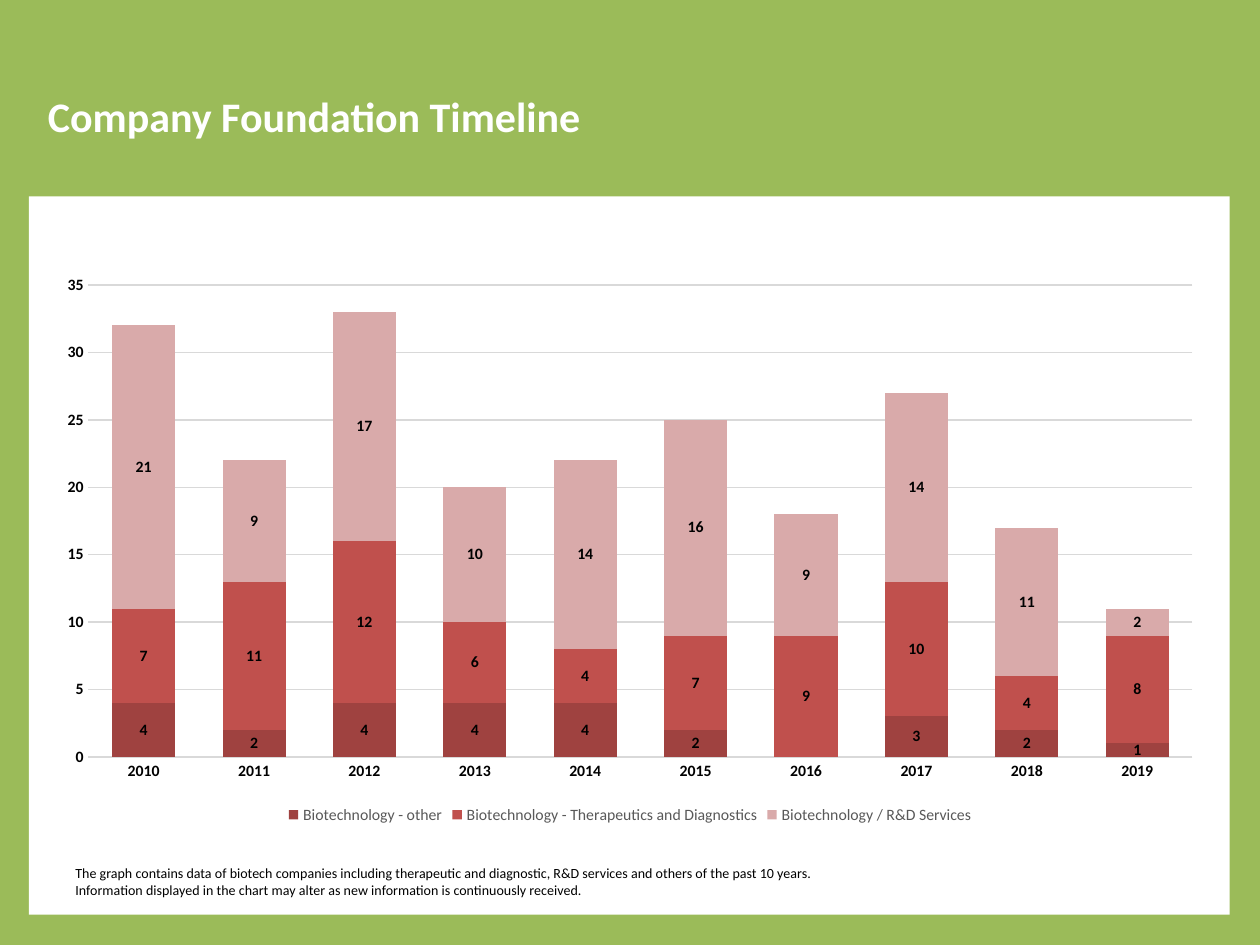
import pptx
import pptx.chart.data
import pptx.dml.color
import pptx.enum.chart
import pptx.enum.shapes
import pptx.enum.text
import pptx.util

Inches = pptx.util.Inches
FONT = "Calibri"
YEARS = [str(year) for year in range(2010, 2020)]
SERIES = [
    ("Biotechnology - other", "9F4240", (4, 2, 4, 4, 4, 2, None, 3, 2, 1)),
    ("Biotechnology - Therapeutics and Diagnostics", "C0504D", (7, 11, 12, 6, 4, 7, 9, 10, 4, 8)),
    ("Biotechnology / R&D Services", "D9AAAA", (21, 9, 17, 10, 14, 16, 9, 14, 11, 2)),
]
NOTE = (
    "The graph contains data of biotech companies including therapeutic and diagnostic, "
    "R&D services and others of the past 10 years. "
    "Information displayed in the chart may alter as new information is continuously received."
)


def paint(fill, color):
    """Give a fill one solid colour from a hex string."""
    fill.solid()
    fill.fore_color.rgb = pptx.dml.color.RGBColor.from_string(color)


def style_font(font, size, color="000000", bold=False):
    """Set the typeface, size, colour and weight of a font."""
    font.name = FONT
    font.size = pptx.util.Pt(size)
    font.bold = bold
    paint(font.fill, color)


def write_text(box, text, size, color, bold=False):
    """Write one left-aligned paragraph, centred vertically in its box."""
    frame = box.text_frame
    frame.word_wrap = True
    frame.auto_size = pptx.enum.text.MSO_AUTO_SIZE.NONE
    frame.vertical_anchor = pptx.enum.text.MSO_ANCHOR.MIDDLE
    para = frame.paragraphs[0]
    para.alignment = pptx.enum.text.PP_ALIGN.LEFT
    span = para.add_run()
    span.text = text
    style_font(span.font, size, color, bold)


def add_title(page, left, top, width, height):
    """Place the title placeholder and fill it."""
    title = page.shapes.title
    title.left, title.top, title.width, title.height = left, top, width, height
    write_text(title, "Company Foundation Timeline", 24, "FFFFFF", True)


def style_axis(axis):
    """Give an axis bold labels and no line or tick marks."""
    axis.major_tick_mark = axis.minor_tick_mark = pptx.enum.chart.XL_TICK_MARK.NONE
    axis.format.line.fill.background()
    style_font(axis.tick_labels.font, 9, bold=True)


def add_timeline_chart(page, left, top, width, height):
    """Add the stacked columns of companies founded each year."""
    data = pptx.chart.data.CategoryChartData()
    data.categories = YEARS
    for name, color, values in SERIES:
        data.add_series(name, values)
    kind = pptx.enum.chart.XL_CHART_TYPE.COLUMN_STACKED
    chart = page.shapes.add_chart(kind, left, top, width, height, data).chart
    style_font(chart.font, 10)
    chart.has_title = False
    chart.has_legend = True
    chart.legend.position = pptx.enum.chart.XL_LEGEND_POSITION.BOTTOM
    chart.legend.include_in_layout = False
    style_font(chart.legend.font, 9, "595959")

    style_axis(chart.category_axis)
    style_axis(chart.value_axis)
    grid = chart.value_axis.major_gridlines.format.line
    grid.width = pptx.util.Pt(0.75)
    paint(grid.fill, "D9D9D9")

    plot = chart.plots[0]
    plot.gap_width = 75
    plot.overlap = 100
    plot.vary_by_categories = False
    for series, (name, color, values) in zip(plot.series, SERIES):
        paint(series.format.fill, color)
        series.invert_if_negative = False
        labels = series.data_labels
        labels.show_value = True
        labels.position = pptx.enum.chart.XL_LABEL_POSITION.CENTER
        style_font(labels.font, 9, bold=True)


def add_panel(page, left, top, width, height):
    """Add the white panel with its chart and the note below it."""
    panel = page.shapes.add_shape(
        pptx.enum.shapes.MSO_SHAPE.RECTANGLE, left, top, width, height
    )
    panel.shadow.inherit = False
    paint(panel.fill, "FFFFFF")
    panel.line.fill.background()
    add_timeline_chart(
        page, left + Inches(0.12), top + Inches(0.54), width - Inches(0.23), Inches(4.48)
    )
    note = page.shapes.add_textbox(
        left + Inches(0.27), top + Inches(5.1), Inches(6.3), Inches(0.67)
    )
    write_text(note, NOTE, 8, "000000")


def main():
    """Build the slide and save it."""
    deck = pptx.Presentation()
    deck.slide_width, deck.slide_height = Inches(10), Inches(7.5)
    page = deck.slides.add_slide(deck.slide_layouts[5])
    paint(page.background.fill, "9BBB59")
    add_title(page, Inches(0.28), Inches(0.29), Inches(9), Inches(1.25))
    add_panel(page, Inches(0.23), Inches(1.56), Inches(9.53), Inches(5.7))
    deck.save("out.pptx")


if __name__ == "__main__":
    main()
